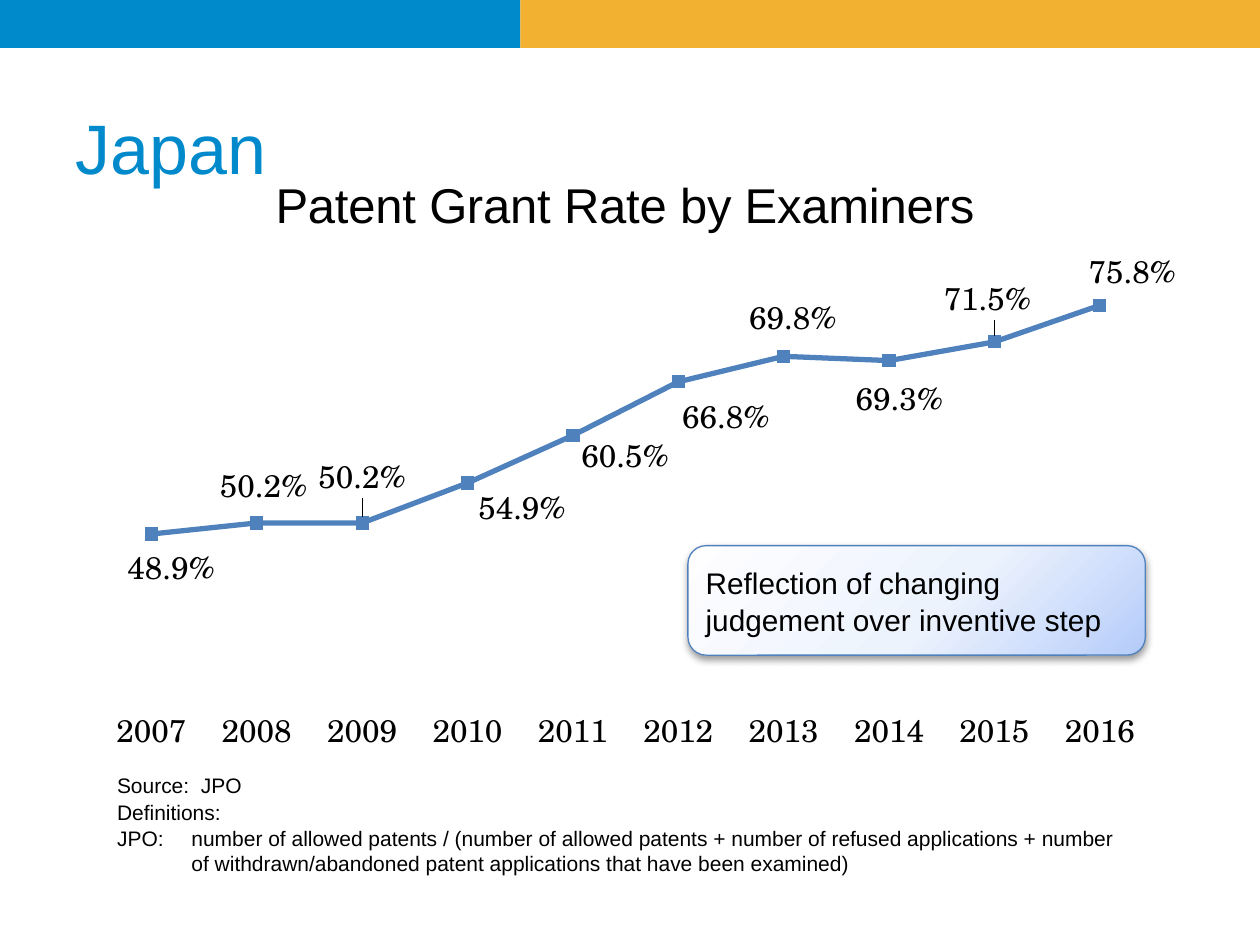
from pptx import Presentation
from pptx.chart.data import CategoryChartData
from pptx.dml.color import RGBColor
from pptx.enum.chart import XL_CHART_TYPE as CT, XL_LABEL_POSITION as LP
from pptx.enum.chart import XL_MARKER_STYLE as MS, XL_TICK_MARK as TM
from pptx.enum.shapes import MSO_SHAPE as SHAPE
from pptx.enum.text import MSO_ANCHOR as ANCHOR, PP_ALIGN as ALIGN
from pptx.oxml import parse_xml
from pptx.oxml.ns import nsdecls
from pptx.util import Pt

BLUE, GOLD, LINE, BLACK = "008ACC", "F2B131", "4F81BD", "000000"
CHART_W, CHART_H = 664, 346


def style(font, size, color=BLACK, name="Arial"):
    for key, value in dict(size=Pt(size), name=name, bold=False).items():
        setattr(font, key, value)
    font.color.rgb = RGBColor.from_string(color)


def layout(x, y, w=None, h=None):
    """Manual chart layout; with a size it places the inner plot area."""
    parts = [("layoutTarget", "inner")] if w else []
    if w or h is not None:
        parts += [("xMode", "edge"), ("yMode", "edge")]
    parts += [("x", x), ("y", y)]
    if w:
        parts += [("w", w), ("h", h)]
    body = "".join(f'<c:{tag} val="{val}"/>' for tag, val in parts)
    return parse_xml(f'<c:layout {nsdecls("c")}><c:manualLayout>{body}'
                     '</c:manualLayout></c:layout>')


prs = Presentation()
prs.slide_width, prs.slide_height = Pt(720), Pt(540)
s = prs.slides.add_slide(prs.slide_layouts[6])

# Header band
for left, width, color in [(0, 297.4, BLUE), (297.4, 422.6, GOLD)]:
    sp = s.shapes.add_shape(SHAPE.RECTANGLE, Pt(left), 0, Pt(width), Pt(27.4))
    sp.shadow.inherit = False
    sp.fill.solid()
    sp.fill.fore_color.rgb = RGBColor.from_string(color)
    sp.line.fill.background()

# Grant rate by year, with each label's offset in points from its marker
rates = [
    (0.489, 11.5, 15.5), (0.502, 4, -18.5), (0.502, 0, -23.5),
    (0.549, 31.5, 10.5), (0.605, 30, 8), (0.668, 27, 16),
    (0.698, 5.5, -19), (0.693, 6, 18), (0.715, -4, -22), (0.758, 18.5, -16.5),
]
data = CategoryChartData(number_format="0.0%")
data.categories = [str(2007 + i) for i in range(len(rates))]
data.add_series("Series 1", [rate for rate, _, _ in rates])
chart = s.shapes.add_chart(CT.LINE_MARKERS, Pt(25.2), Pt(84.2),
                           Pt(CHART_W), Pt(CHART_H), data).chart
style(chart.font, 18, name="TeX Gyre Schola")
chart.has_legend = False

p = chart.chart_title.text_frame.paragraphs[0]
r = p.add_run()
r.text = "Patent Grant Rate by Examiners"
style(r.font, 28)
title = chart.chart_title._element
title.get_or_add_tx().addnext(layout(0.033, 0.105, h=0))

plot_area = chart._chartSpace.chart.plotArea
for old in plot_area.xpath("c:layout"):
    plot_area.remove(old)
plot_area.insert(0, layout(0.047, 0.203, 0.907, 0.705))

axis = chart.value_axis
for key, value in dict(minimum_scale=0.3, maximum_scale=0.8, visible=False,
                       has_major_gridlines=False).items():
    setattr(axis, key, value)
chart.category_axis.major_tick_mark = TM.OUTSIDE
chart.category_axis.format.line.fill.background()

series = chart.plots[0].series[0]
series.smooth = False
series.format.line.width = Pt(3)
series.marker.style, series.marker.size = MS.SQUARE, 7
series.marker.format.fill.solid()
for color in (series.format.line.color, series.marker.format.fill.fore_color,
              series.marker.format.line.color):
    color.rgb = RGBColor.from_string(LINE)

labels = series.data_labels
labels.show_value = True
labels.number_format, labels.number_format_is_linked = "0.0%", False
for i, (_, dx, dy) in enumerate(rates):
    label = series.points[i].data_label
    style(label.font, 18, name="TeX Gyre Schola")
    label.position = LP.ABOVE if dy < 0 else LP.BELOW
    shift = dy + 16 if dy < 0 else dy - 16
    d_lbl = labels._element.xpath(f"c:dLbl[c:idx/@val={i}]")[0]
    d_lbl.xpath("c:idx")[0].addnext(
        layout(round(dx / CHART_W, 3), round(shift / CHART_H, 3)))

# Callout
sp = s.shapes.add_shape(SHAPE.ROUNDED_RECTANGLE, Pt(393.1), Pt(311.8), Pt(261.4), Pt(62.6))
sp.shadow.inherit = False
sp.line.color.rgb = RGBColor.from_string(LINE)
sp.line.width = Pt(0.75)
stops = "".join(f'<a:gs pos="{pos}000"><a:srgbClr val="{color}"/></a:gs>'
                for pos, color in [(0, "FEFEFF"), (55, "EDF3FD"), (100, "B5CCF9")])
sp_pr = sp._element.spPr
sp_pr.insert(2, parse_xml(
    f'<a:gradFill {nsdecls("a")} rotWithShape="1"><a:gsLst>{stops}</a:gsLst>'
    '<a:path path="circle"><a:fillToRect l="-40000" t="-90000" r="140000" b="190000"/>'
    '</a:path></a:gradFill>'))
sp_pr.xpath("a:effectLst")[0].append(parse_xml(
    f'<a:outerShdw {nsdecls("a")} blurRad="{Pt(4.1)}" dist="{Pt(2)}" dir="5400000" '
    'rotWithShape="0"><a:srgbClr val="000000"><a:alpha val="40000"/></a:srgbClr>'
    '</a:outerShdw>'))
tf = sp.text_frame
tf.word_wrap, tf.vertical_anchor = True, ANCHOR.MIDDLE
p = tf.paragraphs[0]
p.alignment, p.line_spacing = ALIGN.LEFT, 1.05
r = p.add_run()
r.text = "Reflection of changing judgement over inventive step"
style(r.font, 17)

# Title and notes: box, size, colour, anchor, hanging indent, paragraphs
texts = [
    ((36, 41.8, 648, 84.2), 40, BLUE, ANCHOR.MIDDLE, 0, ["Japan"]),
    ((59.8, 437.8, 96.5, 21.6), 12, BLACK, ANCHOR.TOP, 42.5, ["Source:  JPO"]),
    ((59.8, 453.6, 594, 51.1), 12, BLACK, ANCHOR.TOP, 42.5, [
        "Definitions:",
        "JPO:\tnumber of allowed patents / (number of allowed patents + number of "
        "refused applications + number of withdrawn/abandoned patent applications "
        "that have been examined)"]),
]
for box, size, color, anchor, indent, lines in texts:
    tf = s.shapes.add_textbox(*map(Pt, box)).text_frame
    tf.word_wrap, tf.vertical_anchor = True, anchor
    for i, line in enumerate(lines):
        p = tf.add_paragraph() if i else tf.paragraphs[0]
        if indent:
            p_pr = p._p.get_or_add_pPr()
            p_pr.set("marL", str(Pt(indent)))
            p_pr.set("indent", str(-Pt(indent)))
        r = p.add_run()
        r.text = line
        style(r.font, size, color)

prs.save("out.pptx")
